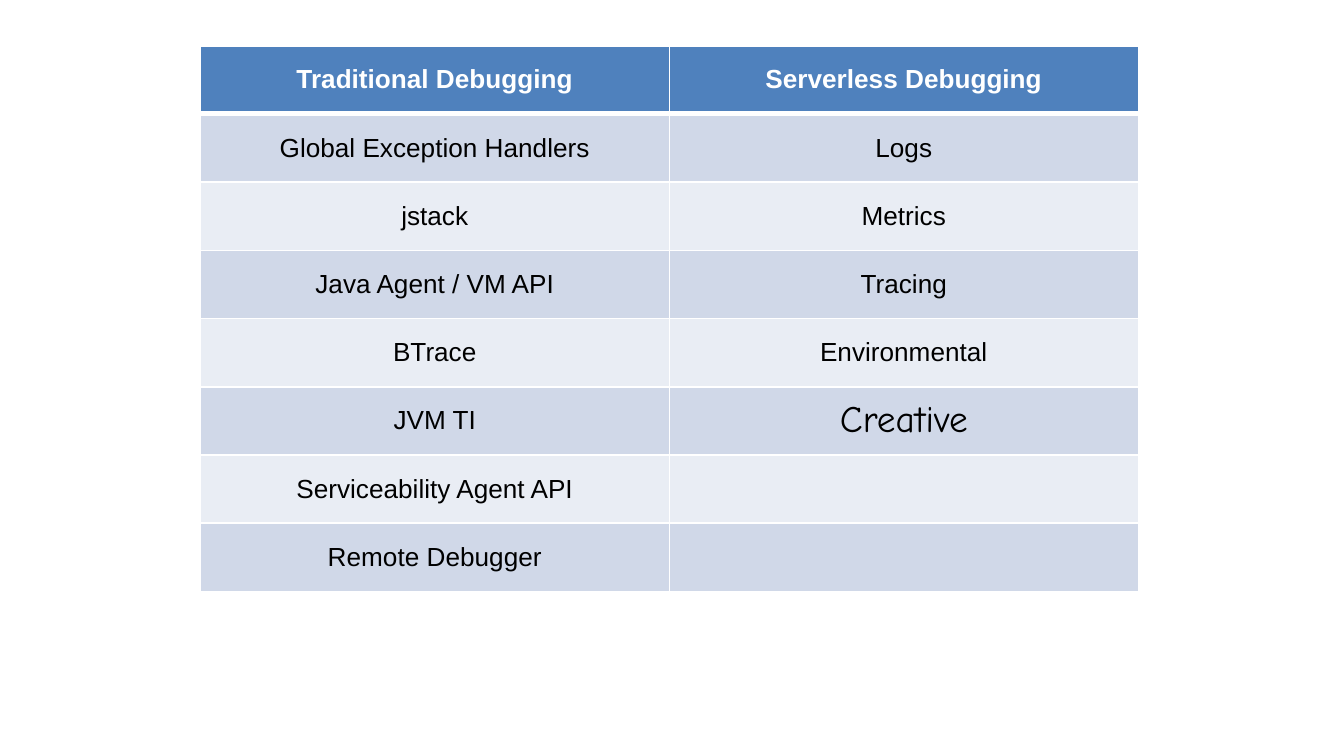
from lxml import etree
from pptx import Presentation
from pptx import util as u
from pptx.dml.color import RGBColor
from pptx.enum import text
from pptx.oxml.ns import qn

WHITE = RGBColor(0xFF, 0xFF, 0xFF)
BLACK = RGBColor(0, 0, 0)
HEAD = RGBColor(0x4F, 0x81, 0xBD)
BANDS = [RGBColor(0xE9, 0xED, 0xF4), RGBColor(0xD0, 0xD8, 0xE8)]

ROWS = [
    ("Traditional Debugging", "Serverless Debugging"),
    ("Global Exception Handlers", "Logs"),
    ("jstack", "Metrics"),
    ("Java Agent / VM API", "Tracing"),
    ("BTrace", "Environmental"),
    ("JVM TI", "Creative"),
    ("Serviceability Agent API", ""),
    ("Remote Debugger", ""),
]
WIDE, TALL = u.Inches(6.98), u.Inches(4.06)
COL, ROW = WIDE // 2, TALL // len(ROWS)


def border(cell, sides):
    props = cell._tc.get_or_add_tcPr()
    for spot, (side, width) in enumerate(sides.items()):
        line = etree.Element(qn("a:ln" + side), w=str(u.Pt(width)))
        fill = etree.SubElement(line, qn("a:solidFill"))
        etree.SubElement(fill, qn("a:srgbClr"), val=str(WHITE))
        props.insert(spot, line)


deck = Presentation()
deck.slide_width = u.Inches(10)
deck.slide_height = deck.slide_width * 9 // 16
slide = deck.slides.add_slide(deck.slide_layouts[6])
table = slide.shapes.add_table(
    len(ROWS), 2, u.Inches(1.49), u.Inches(0.34), WIDE, TALL
).table
for col in table.columns:
    col.width = COL

for r, words in enumerate(ROWS):
    table.rows[r].height = ROW
    for c, word in enumerate(words):
        cell = table.cell(r, c)
        cell.fill.solid()
        cell.fill.fore_color.rgb = BANDS[r % 2] if r else HEAD
        border(cell, {"L": 1, "R": 1, "T": 3 if r == 1 else 1, "B": 1 if r else 3})
        cell.vertical_anchor = text.MSO_ANCHOR.MIDDLE
        cell.margin_left = cell.margin_right = u.Inches(0.1)
        cell.margin_top = cell.margin_bottom = u.Inches(0.05)
        cell.text = word
        para = cell.text_frame.paragraphs[0]
        para.alignment = text.PP_ALIGN.CENTER
        fancy = word == "Creative"
        para.font.name = "Comic Neue" if fancy else "Arial"
        para.font.size = u.Pt(20 if fancy else 14)
        para.font.bold = r == 0
        para.font.color.rgb = BLACK if r else WHITE

deck.save("out.pptx")
